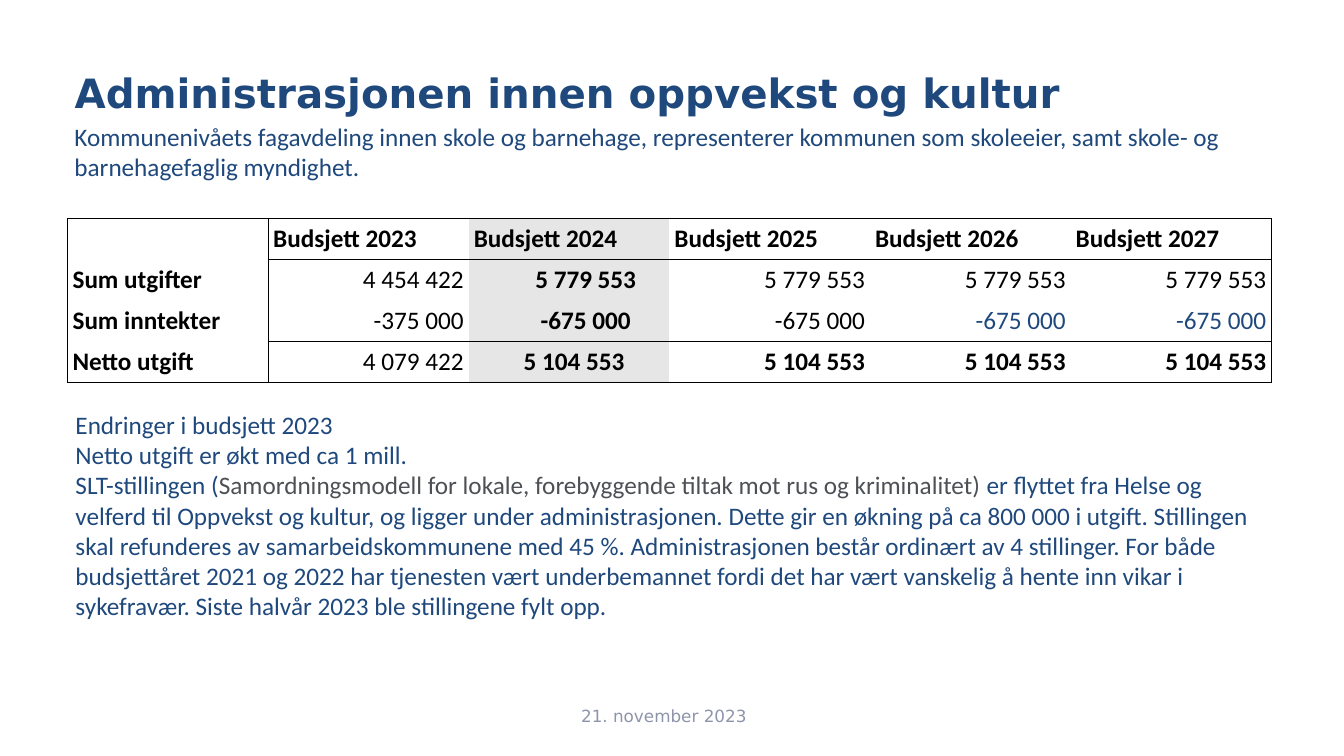
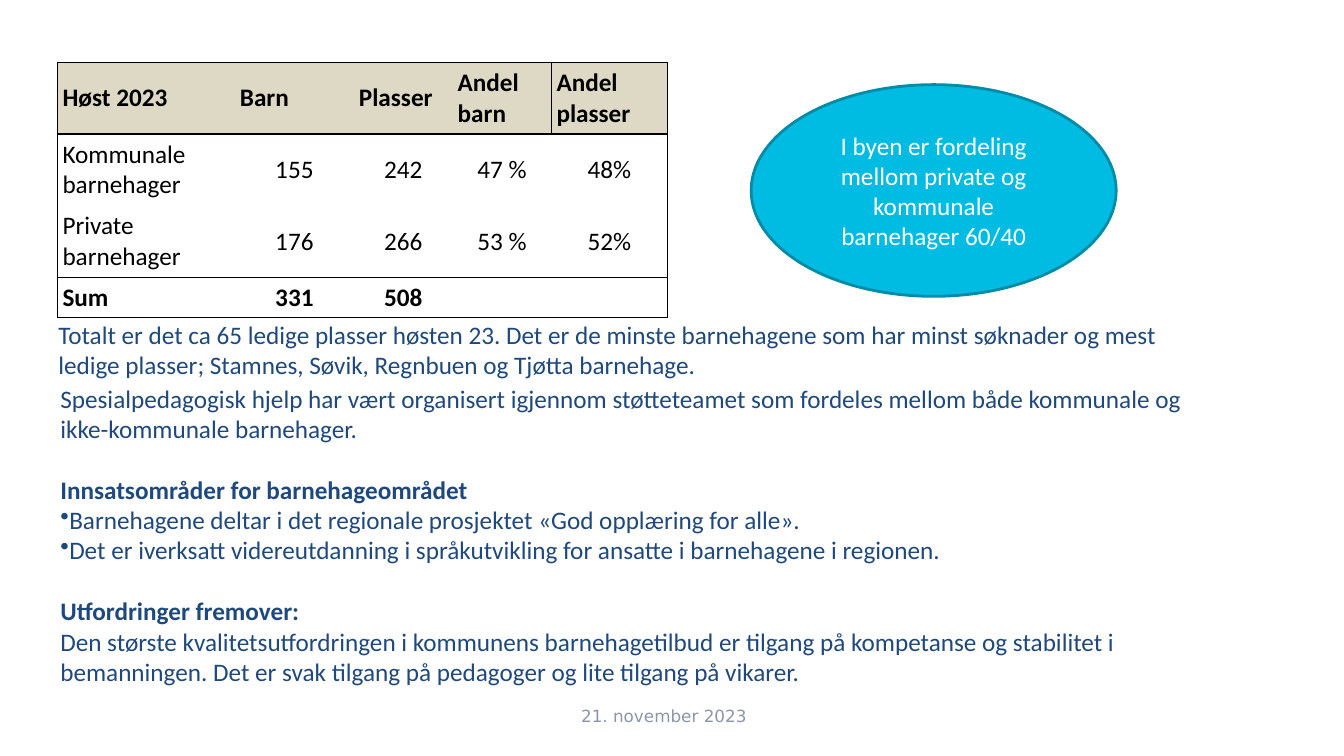
import pptx
import pptx.util
import pptx.dml.color
import pptx.enum.text
import pptx.enum.shapes
import pptx.oxml.ns
import lxml.etree

Inches, Pt = pptx.util.Inches, pptx.util.Pt
ALIGN = pptx.enum.text.PP_ALIGN
ANCHOR = pptx.enum.text.MSO_ANCHOR
qn = pptx.oxml.ns.qn

HEX = {"blue": "1F497D", "black": "000000", "white": "FFFFFF", "grey": "8D95AA",
       "dark": "4D5156", "shade": "E7E6E6", "sand": "DDD9C4",
       "cyan": "00BCE2", "teal": "008BA7"}

BODY = {"name": "Calibri", "size": Pt(18), "bold": False, "color": "blue"}
HEAD = {"name": "DejaVu Sans", "size": Pt(28.8), "bold": True, "color": "blue"}
FOOT = {"name": "DejaVu Sans", "size": Pt(12), "bold": False, "color": "grey"}
STRONG = {"bold": True}

DATE = "21. november 2023"
TITLE = "Administrasjonen innen oppvekst og kultur"
INTRO = ["Kommunenivåets fagavdeling innen skole og barnehage, representerer kommunen "
         "som skoleeier, samt skole- og barnehagefaglig myndighet."]
CHANGES = [
    "Endringer i budsjett 2023",
    "Netto utgift er økt med ca 1 mill.",
    {"runs": [
        ("SLT-stillingen (", {}),
        ("Samordningsmodell for lokale, forebyggende tiltak mot rus og kriminalitet) ",
         {"color": "dark"}),
        ("er flyttet fra Helse og velferd til Oppvekst og kultur, og ligger under "
         "administrasjonen. Dette gir en økning på ca 800 000 i utgift. Stillingen skal "
         "refunderes av samarbeidskommunene med 45 %. Administrasjonen består ordinært av "
         "4 stillinger. For både budsjettåret 2021 og 2022 har tjenesten vært underbemannet "
         "fordi det har vært vanskelig å hente inn vikar i sykefravær. Siste halvår 2023 ble "
         "stillingene fylt opp.", {}),
    ]},
]
PLACES = ["Totalt er det ca 65 ledige plasser høsten 23. Det er de minste barnehagene som har "
          "minst søknader og mest ledige plasser; Stamnes, Søvik, Regnbuen og Tjøtta barnehage."]
AIMS = [
    "Spesialpedagogisk hjelp har vært organisert igjennom støtteteamet som fordeles mellom "
    "både kommunale og ikke-kommunale barnehager.",
    {"runs": [("Innsatsområder for barnehageområdet", STRONG)], "gap": 22},
    {"runs": [("Barnehagene deltar i det regionale prosjektet «God opplæring for alle».", {})],
     "bullet": True},
    {"runs": [("Det er iverksatt videreutdanning i språkutvikling for ansatte i barnehagene "
               "i regionen.", {})], "bullet": True},
    {"runs": [("Utfordringer fremover:", STRONG)], "gap": 22},
    "Den største kvalitetsutfordringen i kommunens barnehagetilbud er tilgang på kompetanse "
    "og stabilitet i bemanningen. Det er svak tilgang på pedagoger og lite tilgang på vikarer.",
]
RATIO = ["I byen er fordeling mellom private og kommunale barnehager 60/40"]

# Rules are (boundary, first cell, end cell) along the line.
BUDGET = {
    "at": (0.67, 2.17), "cols": [1.99] * 6, "rows": [0.4] * 4,
    "cells": [
        [""] + [f"Budsjett {year}" for year in range(2023, 2028)],
        ["Sum utgifter", "4 454 422"] + ["5 779 553"] * 4,
        ["Sum inntekter", "-375 000"] + ["-675 000"] * 4,
        ["Netto utgift", "4 079 422"] + ["5 104 553"] * 4,
    ],
    "across": [(0, 0, 6), (1, 1, 6), (3, 1, 6), (4, 0, 6)],
    "down": [(0, 0, 4), (1, 0, 4), (6, 0, 4)],
}
CHILDREN = {
    "at": (0.57, 0.62), "cols": [1.76, 1.18, 0.98, 0.98, 1.15],
    "rows": [0.71, 0.71, 0.71, 0.4],
    "cells": [
        ["Høst 2023", "Barn", "Plasser", "Andel barn", "Andel plasser"],
        ["Kommunale barnehager", "155", "242", "47 %", "48%"],
        ["Private barnehager", "176", "266", "53 %", "52%"],
        ["Sum", "331", "508", "", ""],
    ],
    "across": [(0, 0, 5), (1, 0, 5), (3, 0, 5), (4, 0, 5)],
    "down": [(0, 0, 4), (4, 0, 1), (5, 0, 4)],
}


def budget_look(row, col):
    label = row == 0 or col == 0
    look = {"align": ALIGN.LEFT if label else ALIGN.RIGHT,
            "bold": label or col == 2 or (row == 3 and col > 1),
            "color": "blue" if row == 2 and col > 3 else "black"}
    if col == 2:
        look["fill"] = "shade"
        if row:
            look.update(align=ALIGN.CENTER, left=0.15 if row == 3 else 0.38)
    return look


def child_look(row, col):
    look = {"align": ALIGN.LEFT if row == 0 or col == 0 else ALIGN.CENTER,
            "bold": row in (0, 3), "color": "black"}
    if row == 0:
        look["fill"] = "sand"
    return look


def rgb(key):
    return pptx.dml.color.RGBColor.from_string(HEX[key])


def box(left, top, width, height):
    return [Inches(v) for v in (left, top, width, height)]


def style(font, *looks):
    for look in looks:
        for key, value in look.items():
            if key == "color":
                font.color.rgb = rgb(value)
            else:
                setattr(font, key, value)


def write(frame, paras, look=BODY, align=ALIGN.LEFT):
    for num, para in enumerate(paras):
        if isinstance(para, str):
            para = {"runs": [(para, {})]}
        line = frame.paragraphs[0] if num == 0 else frame.add_paragraph()
        line.alignment = align
        if para.get("bullet"):
            props = line._p.get_or_add_pPr()
            props.set("marL", "0")
            props.set("indent", "0")
            lxml.etree.SubElement(props, qn("a:buChar")).set("char", "•")
        if "gap" in para:
            line.space_before = Pt(para["gap"])
        for text, extra in para["runs"]:
            run = line.add_run()
            run.text = text
            style(run.font, look, extra)


def add_text(slide, place, paras, **kind):
    frame = slide.shapes.add_textbox(*box(*place)).text_frame
    frame.word_wrap = True
    write(frame, paras, **kind)
    return frame


def add_foot(slide):
    frame = add_text(slide, (5.03, 6.9, 3.11, 0.4), [DATE], look=FOOT, align=ALIGN.CENTER)
    frame.vertical_anchor = ANCHOR.MIDDLE


def add_edge(cell, side, shown):
    line = lxml.etree.SubElement(cell._tc.get_or_add_tcPr(), qn("a:ln" + side))
    line.set("w", str(Pt(1)))
    if shown:
        fill = lxml.etree.SubElement(line, qn("a:solidFill"))
        lxml.etree.SubElement(fill, qn("a:srgbClr")).set("val", HEX["black"])
    else:
        lxml.etree.SubElement(line, qn("a:noFill"))


def add_grid(slide, data, rule):
    cols, rows = data["cols"], data["rows"]
    table = slide.shapes.add_table(len(rows), len(cols),
                                   *box(*data["at"], sum(cols), sum(rows))).table
    table.first_row = table.horz_banding = False
    for parts, sizes in ((table.columns, cols), (table.rows, rows)):
        for part, size in zip(parts, sizes):
            setattr(part, "width" if sizes is cols else "height", Inches(size))
    across = {(row, col) for row, start, end in data["across"] for col in range(start, end)}
    down = {(row, col) for col, start, end in data["down"] for row in range(start, end)}
    for row, texts in enumerate(data["cells"]):
        for col, text in enumerate(texts):
            cell, look = table.cell(row, col), rule(row, col)
            for side, shown in (("L", (row, col) in down), ("R", (row, col + 1) in down),
                                ("T", (row, col) in across), ("B", (row + 1, col) in across)):
                add_edge(cell, side, shown)
            if "fill" in look:
                cell.fill.solid()
                cell.fill.fore_color.rgb = rgb(look["fill"])
            else:
                cell.fill.background()
            for side in ("left", "right", "top", "bottom"):
                setattr(cell, "margin_" + side, Inches(look.get(side, 0.05)))
            cell.vertical_anchor = ANCHOR.MIDDLE
            if text:
                font = {**BODY, "bold": look["bold"], "color": look["color"]}
                write(cell.text_frame, [text], font, look["align"])


def add_title(slide, text):
    title = slide.shapes.title
    title.left, title.top, title.width, title.height = box(0.64, 0.62, 10.5, 0.6)
    frame = title.text_frame
    frame.auto_size = pptx.enum.text.MSO_AUTO_SIZE.NONE
    frame.vertical_anchor = ANCHOR.MIDDLE
    write(frame, [text], HEAD)


def add_oval(slide, place, paras):
    oval = slide.shapes.add_shape(pptx.enum.shapes.MSO_SHAPE.OVAL, *box(*place))
    oval.shadow.inherit = False
    oval.fill.solid()
    oval.fill.fore_color.rgb = rgb("cyan")
    oval.line.color.rgb = rgb("teal")
    oval.line.width = Pt(2)
    oval.text_frame.word_wrap = True
    oval.text_frame.vertical_anchor = ANCHOR.MIDDLE
    write(oval.text_frame, paras, {**BODY, "color": "white"}, ALIGN.CENTER)


def main():
    deck = pptx.Presentation()
    deck.slide_width, deck.slide_height = Inches(13.33), Inches(7.5)

    slide = deck.slides.add_slide(deck.slide_layouts[5])
    add_title(slide, TITLE)
    add_grid(slide, BUDGET, budget_look)
    add_foot(slide)
    add_text(slide, (0.64, 1.15, 12.3, 0.71), INTRO)
    add_text(slide, (0.65, 4.01, 11.92, 2.22), CHANGES)

    slide = deck.slides.add_slide(deck.slide_layouts[6])
    add_foot(slide)
    add_grid(slide, CHILDREN, child_look)
    add_text(slide, (0.48, 3.12, 11.42, 0.71), PLACES)
    add_text(slide, (0.5, 3.75, 11.58, 3.1), AIMS)
    add_oval(slide, (7.45, 0.84, 3.62, 2.1), RATIO)

    deck.save("out.pptx")


if __name__ == "__main__":
    main()
